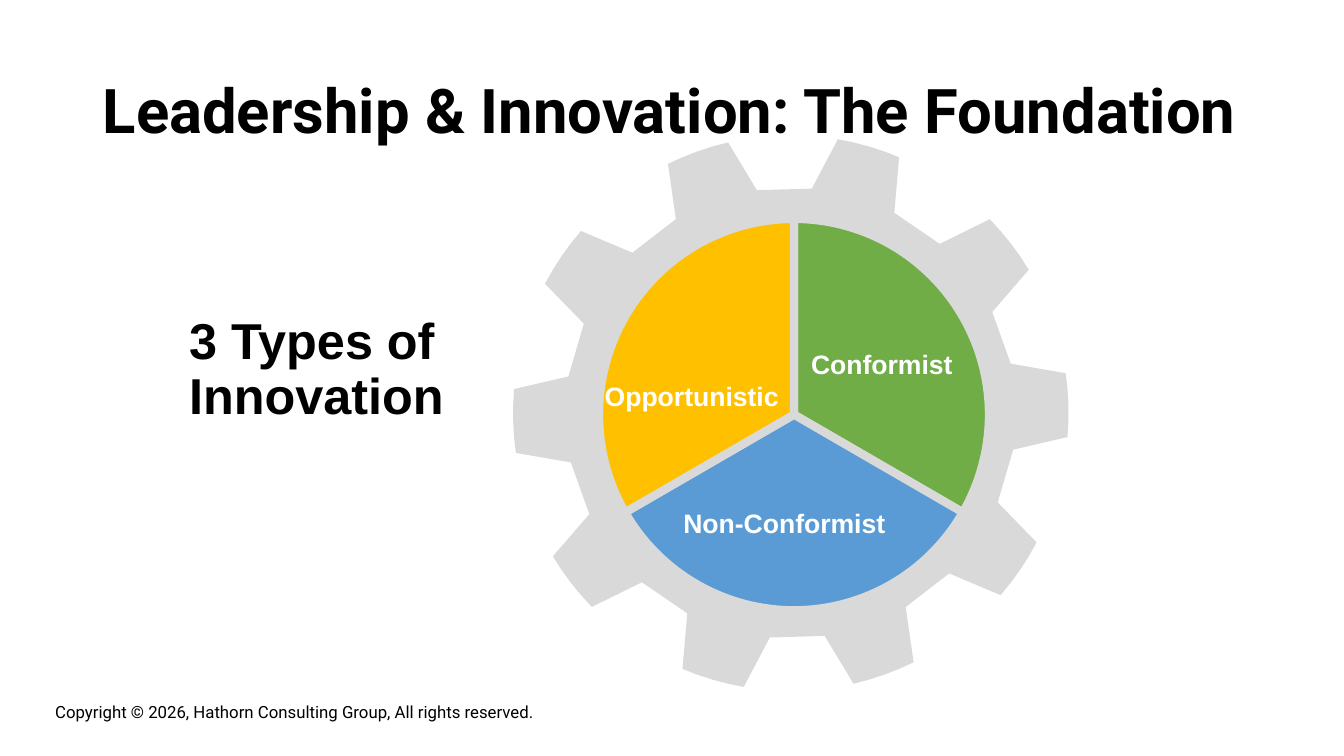
from dataclasses import dataclass
from math import cos, radians, sin

from pptx import Presentation
from pptx.chart.data import CategoryChartData
from pptx.dml.color import RGBColor
from pptx.enum.chart import XL_CHART_TYPE
from pptx.enum.text import MSO_ANCHOR, MSO_AUTO_SIZE
from pptx.oxml import parse_xml
from pptx.oxml.ns import nsdecls, qn
from pptx.slide import Slide
from pptx.util import Cm, Pt

GREY = "D9D9D9"
WHITE = "FFFFFF"
BLACK = "000000"


@dataclass
class InnovationType:
    name: str
    color: str
    left: float
    top: float
    width: float


TYPES = [
    InnovationType("Conformist", "70AD47", 20.19, 8.64, 4.14),
    InnovationType("Non-Conformist", "5B9BD5", 16.97, 12.65, 5.66),
    InnovationType("Opportunistic", "FFC000", 14.99, 9.45, 4.95),
]


def rgb(color: str) -> RGBColor:
    return RGBColor.from_string(color)


def add_text(s: Slide, text: str, left: float, top: float, width: float, height: float, *,
             size: float, font: str = "Arial", color: str = BLACK, bold: bool = True,
             wrap: bool = True, grow: bool = False, spacing: float = 1.0,
             anchor: MSO_ANCHOR = MSO_ANCHOR.TOP) -> None:
    tf = s.shapes.add_textbox(Cm(left), Cm(top), Cm(width), Cm(height)).text_frame
    tf.word_wrap = wrap
    tf.auto_size = MSO_AUTO_SIZE.SHAPE_TO_FIT_TEXT if grow else MSO_AUTO_SIZE.NONE
    tf.vertical_anchor = anchor
    p = tf.paragraphs[0]
    p.line_spacing = spacing
    r = p.add_run()
    r.text = text
    r.font.name = font
    r.font.size = Pt(size)
    r.font.bold = bold
    r.font.color.rgb = rgb(color)


def add_gear(s: Slide, cx: float, cy: float, tip: float, root: float, teeth: int,
             first_angle: float) -> None:
    """Draw a gear whose tooth tips follow the outer circle."""
    profile = [(-11, root), *((a, tip) for a in (-6.6, -3.3, 0, 3.3, 6.6)), (11, root)]
    points = []
    for tooth in range(teeth):
        for offset, radius in profile:
            angle = radians(first_angle + tooth * 360 / teeth + offset)
            points.append((Cm(cx + radius * cos(angle)), Cm(cy + radius * sin(angle))))
    builder = s.shapes.build_freeform(*points[0])
    builder.add_line_segments(points[1:])
    sp = builder.convert_to_shape()
    sp.shadow.inherit = False
    sp.fill.solid()
    sp.fill.fore_color.rgb = rgb(GREY)
    sp.line.fill.background()


def add_pie(s: Slide, left: float, top: float, width: float, height: float) -> None:
    data = CategoryChartData()
    data.categories = [str(i) for i in range(1, len(TYPES) + 1)]
    data.add_series("Series 1", [33] * len(TYPES))
    chart = s.shapes.add_chart(XL_CHART_TYPE.PIE, Cm(left), Cm(top), Cm(width), Cm(height),
                               data).chart
    chart.has_title = False
    chart.has_legend = False
    chart.font.name = "Calibri"
    chart.font.size = Pt(10)
    chart.font.color.rgb = rgb(BLACK)
    plot = chart.plots[0]
    plot.vary_by_categories = True
    for i, kind in enumerate(TYPES):
        form = plot.series[0].points[i].format
        form.fill.solid()
        form.fill.fore_color.rgb = rgb(kind.color)
        form.line.color.rgb = rgb(GREY)
        form.line.width = Pt(6)

    area = chart.element.find(".//" + qn("c:plotArea"))
    for old in area.findall(qn("c:layout")):
        area.remove(old)
    area.insert(0, parse_xml(
        f'<c:layout {nsdecls("c")}><c:manualLayout><c:layoutTarget val="inner"/>'
        '<c:xMode val="edge"/><c:yMode val="edge"/><c:x val="0"/><c:y val="0.005"/>'
        '<c:w val="0.962"/><c:h val="0.962"/></c:manualLayout></c:layout>'))


def main() -> None:
    prs = Presentation()
    prs.slide_width, prs.slide_height = Cm(33.87), Cm(19.05)
    s = prs.slides.add_slide(prs.slide_layouts[6])

    add_text(s, "Copyright © 2026, Hathorn Consulting Group, All rights reserved.",
             1.14, 17.55, 19.79, 0.76, size=12, font="Roboto", bold=False, grow=True)
    add_text(s, "Leadership & Innovation: The Foundation", 2.34, 1.02, 29.21, 3.68,
             size=44, font="Roboto", spacing=0.9, anchor=MSO_ANCHOR.MIDDLE)
    add_text(s, "3 Types of Innovation", 4.52, 7.85, 7.62, 4.27, size=36, spacing=0.9)

    add_gear(s, 19.93, 10.41, tip=7, root=5.68, teeth=10, first_angle=-1.65)
    add_pie(s, 14.99, 5.41, 10.34, 10.31)
    for kind in TYPES:
        add_text(s, kind.name, kind.left, kind.top, kind.width, 1.07,
                 size=19, color=WHITE, wrap=False, grow=True)

    prs.save("out.pptx")


if __name__ == "__main__":
    main()
